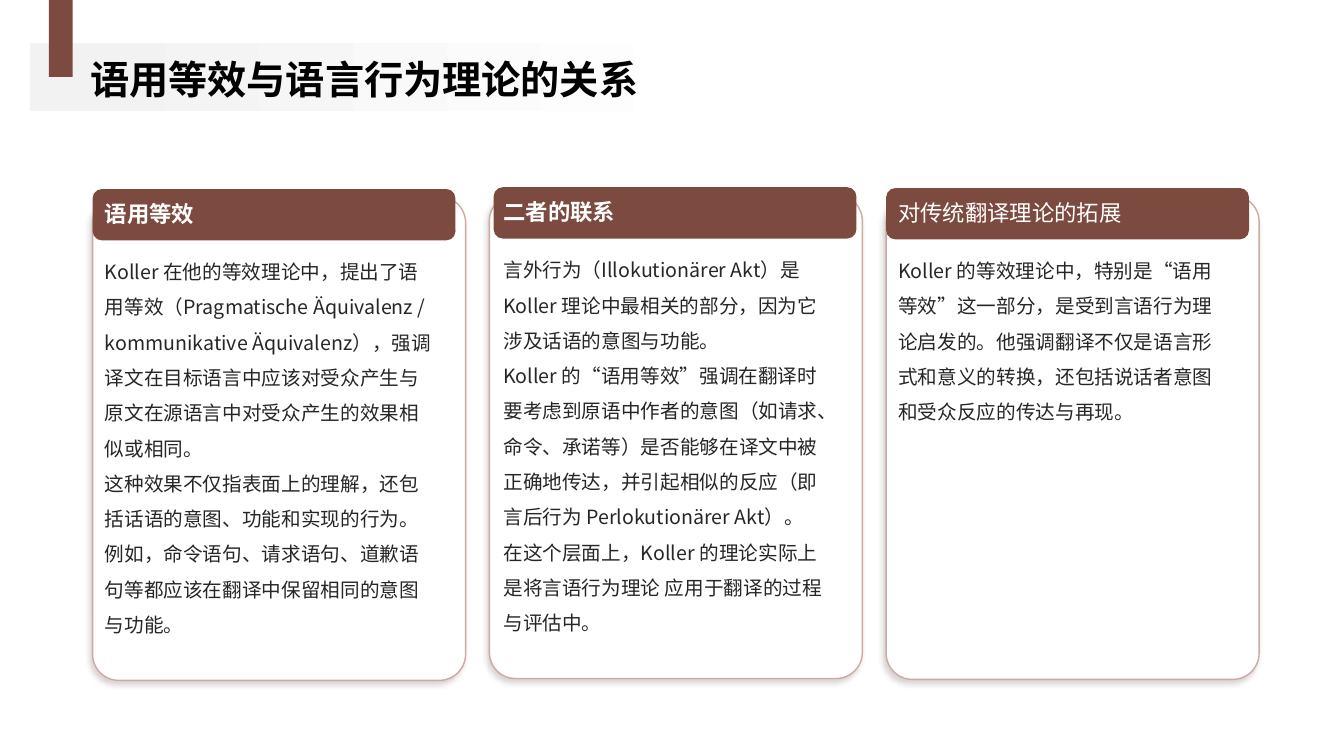
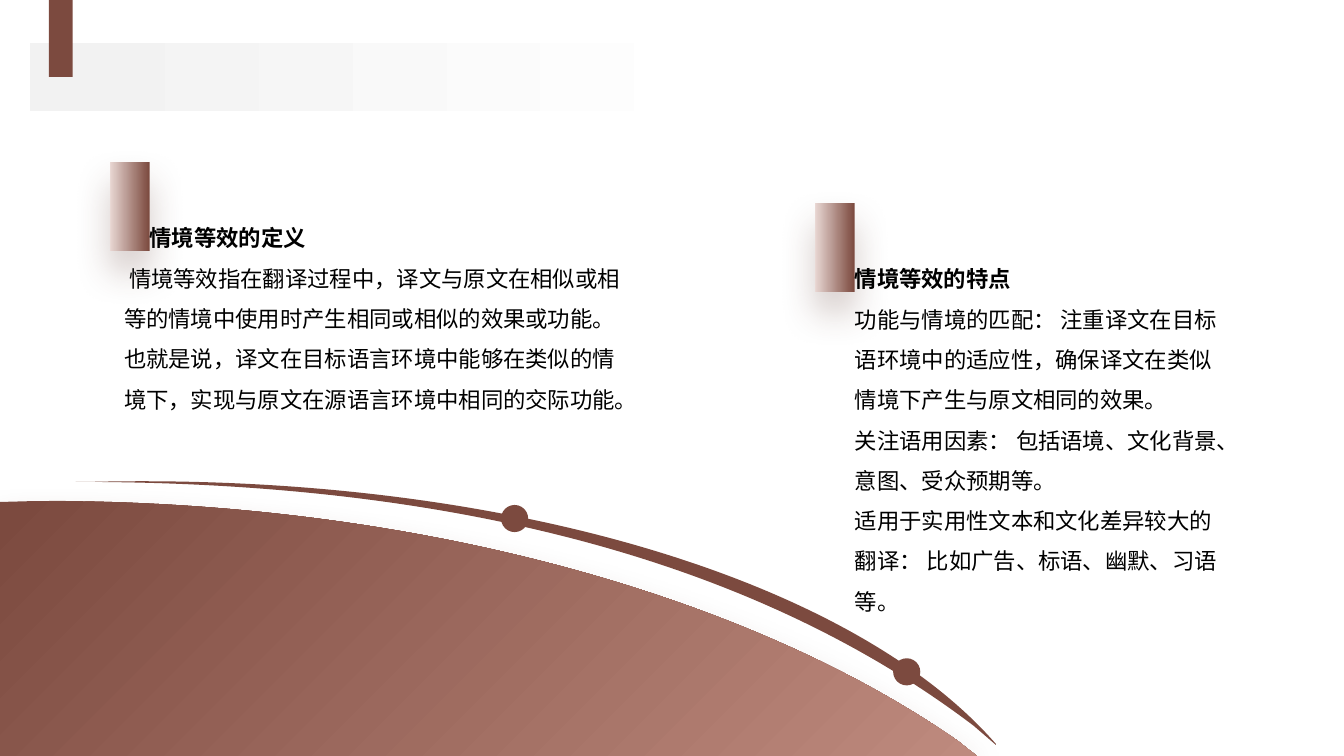
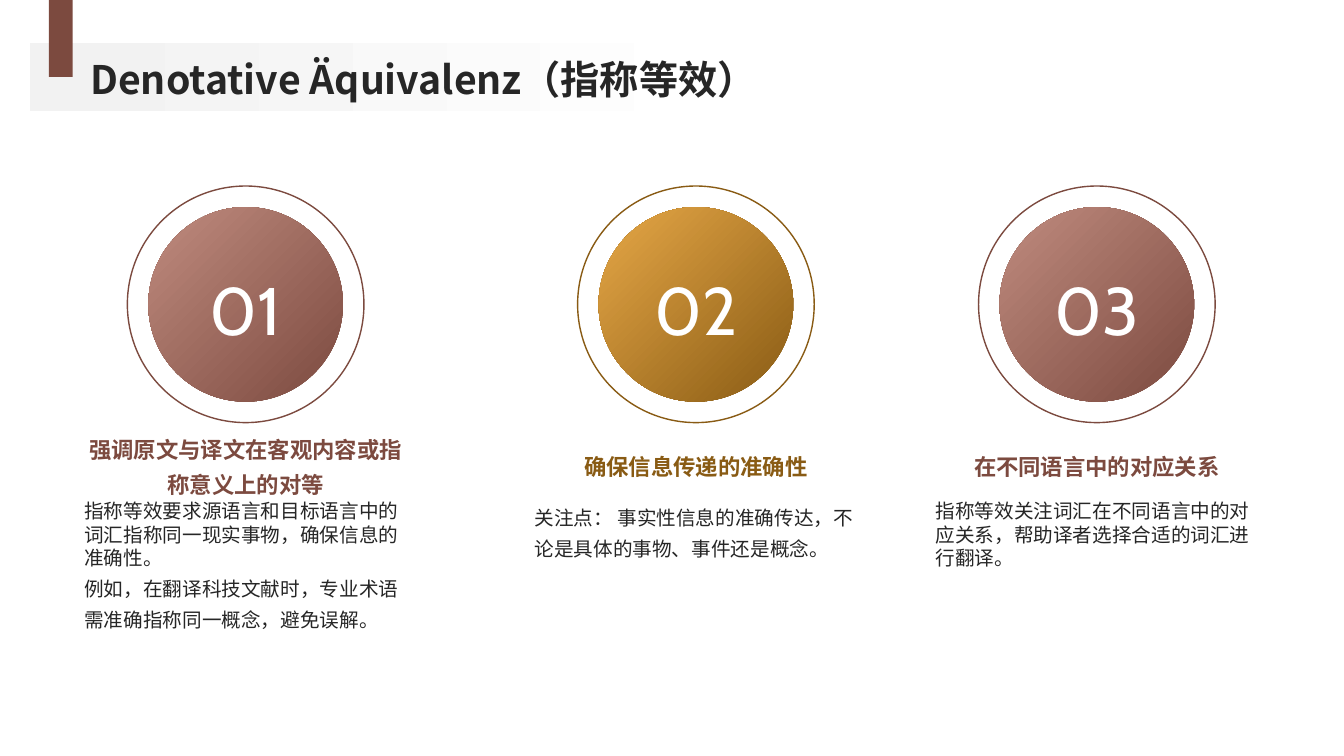
from lxml.etree import SubElement
from pptx import Presentation
from pptx.dml.color import RGBColor as RGB
from pptx.enum.shapes import MSO_SHAPE as SHAPE
from pptx.enum.text import MSO_ANCHOR as ANCHOR, PP_ALIGN as ALIGN
from pptx.oxml.ns import qn
from pptx.util import Pt


class Theme:
    brown, rose, blush = "7C4A3F", "BE8A7E", "E9D8D4"
    ochre, gold = "895B14", "E4A646"
    white, black, ink, grey = "FFFFFF", "000000", "262626", "F2F2F2"
    card_line = "CDA9A1"
    font, number_font = "Noto Sans CJK SC", "Cabin"
    title, number, heading, body = 28, 48, 16, 14
    # colour, opacity %, blur, distance, direction
    card_shadow = ("3E2520", 20, 4, 3, 135)
    soft_shadow = ("5D382F", 25, 26, 15, 90)


T = Theme


def style(sp, fill=None, line=None, shadow=None):
    """Fill is a colour, or (angle, (position, colour), (position, colour))."""
    sp.shadow.inherit = False
    if fill is None:
        sp.fill.background()
    elif isinstance(fill, str):
        sp.fill.solid()
        sp.fill.fore_color.rgb = RGB.from_string(fill)
    else:
        angle, *stops = fill
        sp.fill.gradient()
        sp.fill.gradient_angle = (360 - angle) % 360
        for stop, (pos, color) in zip(sp.fill.gradient_stops, stops):
            stop.position = pos
            stop.color.rgb = RGB.from_string(color)
    if line:
        sp.line.color.rgb = RGB.from_string(line)
        sp.line.width = Pt(1)
    else:
        sp.line.fill.background()
    if shadow:
        color, opacity, blur, dist, angle = shadow
        effects = sp._element.spPr.find(qn("a:effectLst"))
        outer = SubElement(effects, qn("a:outerShdw"), blurRad=str(Pt(blur)),
                           dist=str(Pt(dist)), dir=str(angle * 60000),
                           algn="ctr", rotWithShape="0")
        clr = SubElement(outer, qn("a:srgbClr"), val=color)
        SubElement(clr, qn("a:alpha"), val=str(opacity * 1000))


def text(s, box, paras, size, color, spacing, bold=False, font=T.font,
         anchor=ANCHOR.TOP, align=ALIGN.LEFT):
    """Each paragraph is a string, or (string, its own line spacing)."""
    tf = s.shapes.add_textbox(*map(Pt, box)).text_frame
    tf.word_wrap = True
    tf.vertical_anchor = anchor
    tf.margin_left = tf.margin_right = tf.margin_top = tf.margin_bottom = 0
    for i, para in enumerate(paras):
        words, gap = (para, spacing) if isinstance(para, str) else para
        p = tf.paragraphs[0] if i == 0 else tf.add_paragraph()
        p.text = words
        p.alignment = align
        p.line_spacing = gap
        p.font.size = Pt(size)
        p.font.bold = bold
        p.font.color.rgb = RGB.from_string(color)
        p.font.name = font
        SubElement(p._p.pPr.find(qn("a:defRPr")), qn("a:ea"), typeface=font)


prs = Presentation()
prs.slide_width, prs.slide_height = Pt(960), Pt(540)

# Title band, tab and title of every slide
titles = [("语用等效与语言行为理论的关系", T.black), (None, None),
          ("Denotative Äquivalenz（指称等效）", T.ink)]
for title, color in titles:
    s = prs.slides.add_slide(prs.slide_layouts[6])
    band = s.shapes.add_shape(SHAPE.RECTANGLE, Pt(21.6), Pt(31), Pt(593.3), Pt(48.2))
    style(band, (0, (0.05, T.grey), (0.84, T.white)))
    tab = s.shapes.add_shape(SHAPE.RECTANGLE, Pt(35), 0, Pt(17), Pt(55))
    style(tab, T.brown)
    if title:
        text(s, (64.5, 36.2, 842.4, 36.7), [title], T.title, color, 1.1,
             bold=True, anchor=ANCHOR.MIDDLE)

relation, situation, denotation = prs.slides

# Slide 1: three cards, as (top, header shift, text shift, bold, heading, paragraphs)
cards = [
    (135, 0, 8.7, True, "语用等效", [
        "Koller 在他的等效理论中，提出了语用等效（Pragmatische Äquivalenz / kommunikative "
        "Äquivalenz），强调译文在目标语言中应该对受众产生与原文在源语言中对受众产生的效果相似或相同。",
        "这种效果不仅指表面上的理解，还包括话语的意图、功能和实现的行为。",
        "例如，命令语句、请求语句、道歉语句等都应该在翻译中保留相同的意图与功能。"]),
    (133.7, 3, 10, True, "二者的联系", [
        "言外行为（Illokutionärer Akt）是 Koller 理论中最相关的部分，因为它涉及话语的意图与功能。",
        "Koller 的“语用等效”强调在翻译时要考虑到原语中作者的意图（如请求、命令、承诺等）"
        "是否能够在译文中被正确地传达，并引起相似的反应（即言后行为 Perlokutionärer Akt）。",
        "在这个层面上，Koller 的理论实际上是将言语行为理论 应用于翻译的过程与评估中。"]),
    (134.3, 0, 8.7, False, "对传统翻译理论的拓展", [
        "Koller 的等效理论中，特别是“语用等效”这一部分，是受到言语行为理论启发的。"
        "他强调翻译不仅是语言形式和意义的转换，还包括说话者意图和受众反应的传达与再现。"]),
]
for i, (top, header_dx, text_dx, bold, heading, paras) in enumerate(cards):
    left = 66.2 + i * 283.4
    card = relation.shapes.add_shape(SHAPE.ROUNDED_RECTANGLE, Pt(left), Pt(top + 5.4),
                                     Pt(266.4), Pt(345.6))
    card.adjustments[0] = 0.07
    style(card, T.white, T.card_line, T.card_shadow)
    header = relation.shapes.add_shape(SHAPE.ROUNDED_RECTANGLE, Pt(left + header_dx),
                                       Pt(top), Pt(259.2), Pt(36.7))
    header.adjustments[0] = 0.18
    style(header, T.brown)
    text(relation, (left + text_dx, top, 235.4, 27.2), [heading], T.heading,
         T.white, 1.1, bold=bold, anchor=ANCHOR.BOTTOM)
    text(relation, (left + text_dx, top + 42.4, 235.4, 292.3), paras, T.body, T.ink, 1.5)

# Slide 2: hill and tapered arc; two numbers are a corner, six a Bézier curve
hill = [(29.5, 357.8), (297.4, 357.8, 535, 425.5, 684, 529.2),
        (697.7, 540), (0, 540), (0, 358.6)]
arc = [(54, 344.2), (63.4, 344.2), (357.1, 337, 608.4, 413.3, 711.4, 531.4),
       (711.4, 532.1), (695.5, 518.4), (540.7, 401, 326.9, 344.9, 60.5, 344.2)]
hill_fill = (45, (0.01, T.brown), (1, T.rose))
for outline, fill, shadow in [(hill, hill_fill, T.soft_shadow), (arc, T.brown, None)]:
    start, *corners = [(Pt(part[k]), Pt(part[k + 1]))
                       for part in outline for k in range(0, len(part), 2)]
    builder = situation.shapes.build_freeform(*start)
    builder.add_line_segments(corners, close=True)
    sp = builder.convert_to_shape()
    # Join the three points of each curve into one Bézier segment
    lines = iter(list(sp._element.iter(qn("a:lnTo"))))
    for part in outline[1:]:
        first = next(lines)
        if len(part) == 6:
            first.tag = qn("a:cubicBezTo")
            for extra in (next(lines), next(lines)):
                first.append(extra[0])
                extra.getparent().remove(extra)
    style(sp, fill, shadow=shadow)

# Slide 2: dots on the arc, each with a core
for x, y in [(647.7, 479.9), (367.6, 370.4)]:
    for d in (19.4, 5.8):
        sp = situation.shapes.add_shape(SHAPE.OVAL, Pt(x - d / 2), Pt(y - d / 2),
                                        Pt(d), Pt(d))
        style(sp, T.brown)

# Slide 2: marked text blocks, as (left, top, body left, body width, heading, paragraphs)
blocks = [
    (78.4, 115.9, 88.6, 355, "情境等效的定义", [
        " 情境等效指在翻译过程中，译文与原文在相似或相等的情境中使用时产生相同或相似的效果或功能。"
        "也就是说，译文在目标语言环境中能够在类似的情境下，实现与原文在源语言环境中相同的交际功能。"]),
    (582, 145.2, 610.6, 260.6, "情境等效的特点", [
        "功能与情境的匹配： 注重译文在目标语环境中的适应性，确保译文在类似情境下产生与原文相同的效果。",
        "关注语用因素： 包括语境、文化背景、意图、受众预期等。",
        "适用于实用性文本和文化差异较大的翻译： 比如广告、标语、幽默、习语等。"]),
]
for left, top, body_left, body_width, heading, paras in blocks:
    marker = situation.shapes.add_shape(SHAPE.RECTANGLE, Pt(left), Pt(top),
                                        Pt(28.5), Pt(63.4))
    style(marker, (180, (0.01, T.brown), (1, T.blush)), shadow=T.soft_shadow)
    text(situation, (left + 28.5, top + 14.4, 226.8, 49), [heading], T.heading,
         T.black, 1.3, bold=True, anchor=ANCHOR.BOTTOM)
    text(situation, (body_left, top + 63.7, body_width, 113), paras, T.heading,
         T.black, 1.5)

# Slide 3: numbered discs, as (centre, dark, light, heading, paragraphs)
columns = [
    (175.5, T.brown, T.rose, "强调原文与译文在客观内容或指称意义上的对等", [
        ("指称等效要求源语言和目标语言中的词汇指称同一现实事物，确保信息的准确性。", 1.0),
        "例如，在翻译科技文献时，专业术语需准确指称同一概念，避免误解。"]),
    (497.1, T.ochre, T.gold, "确保信息传递的准确性", [
        "关注点： 事实性信息的准确传达，不论是具体的事物、事件还是概念。"]),
    (783.5, T.brown, T.rose, "在不同语言中的对应关系", [
        ("指称等效关注词汇在不同语言中的对应关系，帮助译者选择合适的词汇进行翻译。", 1.0)]),
]
middle, width = 217.4, 231
for n, (cx, dark, light, heading, paras) in enumerate(columns, 1):
    disc_fill = (225, (0, dark), (0.98, light))
    for d, fill, line in [(139, disc_fill, None), (169, None, dark)]:
        sp = denotation.shapes.add_shape(SHAPE.FLOWCHART_CONNECTOR, Pt(cx - d / 2),
                                         Pt(middle - d / 2), Pt(d), Pt(d))
        style(sp, fill, line)
    text(denotation, (cx - 44.3, middle - 34.5, 88.6, 69), [f"{n:02}"], T.number,
         T.white, 1.1, font=T.number_font, anchor=ANCHOR.MIDDLE, align=ALIGN.CENTER)
    text(denotation, (cx - width / 2, 310.8, width, 39.6), [heading], T.heading, dark,
         1.3, bold=True, anchor=ANCHOR.MIDDLE, align=ALIGN.CENTER)
    text(denotation, (cx - width / 2 + 0.2, 356.6, width, 131), paras, T.body, T.ink, 1.3)

prs.save("out.pptx")
